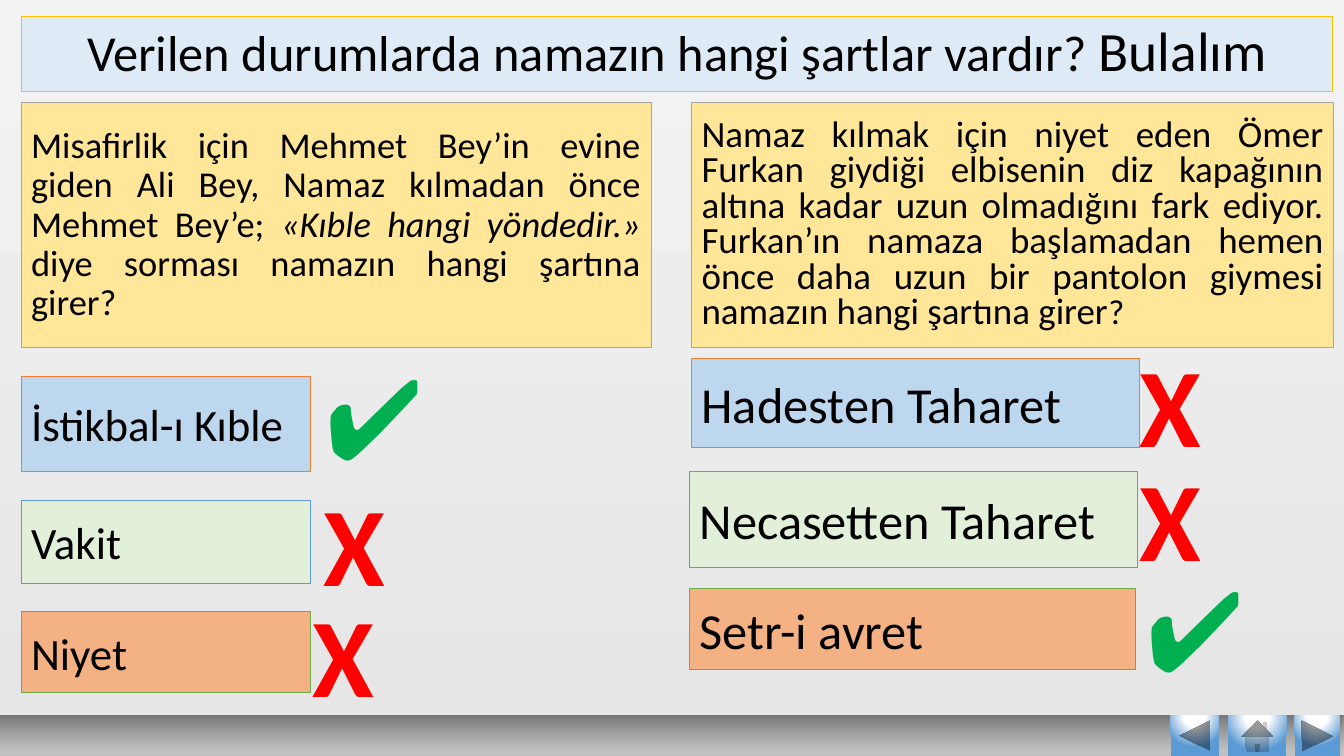
from lxml.etree import SubElement
from pptx import Presentation
from pptx.dml.color import RGBColor
from pptx.enum.shapes import MSO_SHAPE
from pptx.enum.text import MSO_ANCHOR, PP_ALIGN
from pptx.oxml.ns import qn
from pptx.util import Inches, Pt

BLACK = RGBColor(0x00, 0x00, 0x00)
GREEN = RGBColor(0x00, 0xB0, 0x50)
RED = RGBColor(0xFF, 0x00, 0x00)
GOLD = RGBColor(0xFF, 0xC0, 0x00)
GREY = RGBColor(0xA5, 0xA5, 0xA5)
PALE_BLUE = RGBColor(0xDE, 0xEB, 0xF7)
PALE_YELLOW = RGBColor(0xFF, 0xE6, 0x99)
BACKGROUND = (RGBColor(0xF2, 0xF2, 0xF2), RGBColor(0xE7, 0xE6, 0xE6))

# Fill and outline of the first, second and third option of each question
OPTION_COLORS = [
    (RGBColor(0xBD, 0xD7, 0xEE), RGBColor(0xED, 0x7D, 0x31)),
    (RGBColor(0xE2, 0xF0, 0xD9), RGBColor(0x5B, 0x9B, 0xD5)),
    (RGBColor(0xF4, 0xB1, 0x83), RGBColor(0x70, 0xAD, 0x47)),
]
MARK_COLORS = {"✔": GREEN, "X": RED}

# Runs are (text, size, italic)
TITLE = [("Verilen durumlarda namazın hangi şartlar vardır? ", 36, False),
         ("Bulalım", 39.6, False)]

QUESTIONS = [
    {
        "box": (0.21, 1.02, 6.25, 2.43),
        "line_spacing": 0.9,
        "runs": [
            ("Misafirlik için Mehmet Bey’in evine giden Ali Bey, Namaz kılmadan "
             "önce Mehmet Bey’e; ", 26, False),
            ("«Kıble hangi yöndedir.» ", 26, True),
            ("diye sorması namazın hangi şartına girer?", 26, False),
        ],
        "option_size": 32,
        "options": [
            ("İstikbal-ı Kıble", (0.21, 3.73, 2.87, 0.95), "✔", (3.13, 3.64, 0.87, 0.95)),
            ("Vakit", (0.21, 4.96, 2.87, 0.83), "X", (2.99, 4.96, 1.04, 0.83)),
            ("Niyet", (0.21, 6.07, 2.87, 0.8), "X", (2.82, 5.95, 1.17, 1.05)),
        ],
    },
    {
        "box": (6.86, 1.02, 6.37, 2.43),
        "line_spacing": 0.8,
        "runs": [
            ("Namaz kılmak için niyet eden Ömer Furkan giydiği elbisenin diz "
             "kapağının altına kadar uzun olmadığını fark ediyor. Furkan’ın "
             "namaza başlamadan hemen önce daha uzun bir pantolon giymesi "
             "namazın hangi şartına girer", 26.4, False),
            ("?", 24.8, False),
        ],
        "option_size": 36,
        "options": [
            ("Hadesten Taharet", (6.86, 3.56, 4.44, 0.88), "X", (11.16, 3.43, 0.89, 1.12)),
            ("Necasetten Taharet", (6.84, 4.68, 4.44, 0.95), "X", (11.16, 4.65, 0.89, 0.95)),
            ("Setr-i avret", (6.84, 5.84, 4.42, 0.8), "✔", (11.27, 5.69, 0.87, 1.05)),
        ],
    },
]

# Gradient stops are (position %, colour, opacity %)
FOOTER_BOX = (0, 7.1, 13.33, 0.42)
FOOTER_STOPS = [(0, "C0C0C0", 100), (17, "B3B3B3", 70), (100, "777777", 100)]
BUTTON_STOPS = [(0, "FFFFFF", 100), (35, "FFFFFF", 100), (100, "5B9BD5", 100)]
BUTTON_FOCUS = {"l": 50, "t": -80, "r": 50, "b": 180}
BUTTONS = [
    (MSO_SHAPE.ACTION_BUTTON_BACK_OR_PREVIOUS, (11.61, 7.1, 0.48, 0.4)),
    (MSO_SHAPE.ACTION_BUTTON_FORWARD_OR_NEXT, (12.84, 7.1, 0.45, 0.41)),
    (MSO_SHAPE.ACTION_BUTTON_HOME, (12.18, 7.1, 0.58, 0.41)),
]


def inches(box):
    return [Inches(length) for length in box]


def paint(shape, fill, line):
    shape.fill.solid()
    shape.fill.fore_color.rgb = fill
    shape.line.color.rgb = line
    shape.line.width = Pt(0.5)


def write(shape, runs, align, line_spacing=1.0, color=BLACK, bold=False):
    """Fill the shape with one paragraph, centred vertically."""
    frame = shape.text_frame
    frame.word_wrap = True
    frame.vertical_anchor = MSO_ANCHOR.MIDDLE
    paragraph = frame.paragraphs[0]
    paragraph.alignment = align
    paragraph.line_spacing = line_spacing
    paragraph.space_before = Pt(0)
    for text, size, italic in runs:
        run = paragraph.add_run()
        run.text = text
        font = run.font
        font.name = "Calibri"
        font.size = Pt(size)
        font.italic = italic
        font.bold = bold
        font.color.rgb = color


def add_panel(slide, box, fill, line):
    panel = slide.shapes.add_shape(MSO_SHAPE.RECTANGLE, *inches(box))
    panel.shadow.inherit = False
    paint(panel, fill, line)
    return panel


def add_gradient_shape(slide, kind, box, stops, angle=None, focus=None):
    """Add an unlined shape with a linear gradient, or a circular one if focus is given."""
    shape = slide.shapes.add_shape(kind, *inches(box))
    shape.shadow.inherit = False
    shape.line.fill.background()
    shape.fill.gradient()
    gradient = shape._element.spPr.find(qn("a:gradFill"))
    for child in list(gradient):
        gradient.remove(child)
    stop_list = SubElement(gradient, qn("a:gsLst"))
    for position, color, opacity in stops:
        stop = SubElement(stop_list, qn("a:gs"), pos=str(position * 1000))
        rgb = SubElement(stop, qn("a:srgbClr"), val=color)
        if opacity < 100:
            SubElement(rgb, qn("a:alpha"), val=str(opacity * 1000))
    if focus:
        circle = SubElement(gradient, qn("a:path"), {"path": "circle"})
        SubElement(circle, qn("a:fillToRect"),
                   {side: str(percent * 1000) for side, percent in focus.items()})
    else:
        SubElement(gradient, qn("a:lin"), ang=str(angle * 60000), scaled="0")


def add_question(slide, question):
    panel = add_panel(slide, question["box"], PALE_YELLOW, GREY)
    write(panel, question["runs"], PP_ALIGN.JUSTIFY, question["line_spacing"])
    for (label, box, mark, mark_box), colors in zip(question["options"], OPTION_COLORS):
        option = add_panel(slide, box, *colors)
        write(option, [(label, question["option_size"], False)], PP_ALIGN.LEFT)
        answer = slide.shapes.add_textbox(*inches(mark_box))
        write(answer, [(mark, 80, False)], PP_ALIGN.CENTER,
              color=MARK_COLORS[mark], bold=True)


def main():
    presentation = Presentation()
    presentation.slide_width = Inches(13.33)
    presentation.slide_height = Inches(7.5)
    slide = presentation.slides.add_slide(presentation.slide_layouts[5])

    backdrop = slide.background.fill
    backdrop.gradient()
    backdrop.gradient_angle = 270
    for stop, color in zip(backdrop.gradient_stops, BACKGROUND):
        stop.color.rgb = color

    title = slide.shapes.title
    title.left, title.top, title.width, title.height = inches((0.21, 0.16, 13.01, 0.75))
    paint(title, PALE_BLUE, GOLD)
    write(title, TITLE, PP_ALIGN.CENTER, 0.9)

    for question in QUESTIONS:
        add_question(slide, question)

    add_gradient_shape(slide, MSO_SHAPE.RECTANGLE, FOOTER_BOX, FOOTER_STOPS, angle=270)
    for kind, box in BUTTONS:
        add_gradient_shape(slide, kind, box, BUTTON_STOPS, focus=BUTTON_FOCUS)

    presentation.save("out.pptx")


if __name__ == "__main__":
    main()
